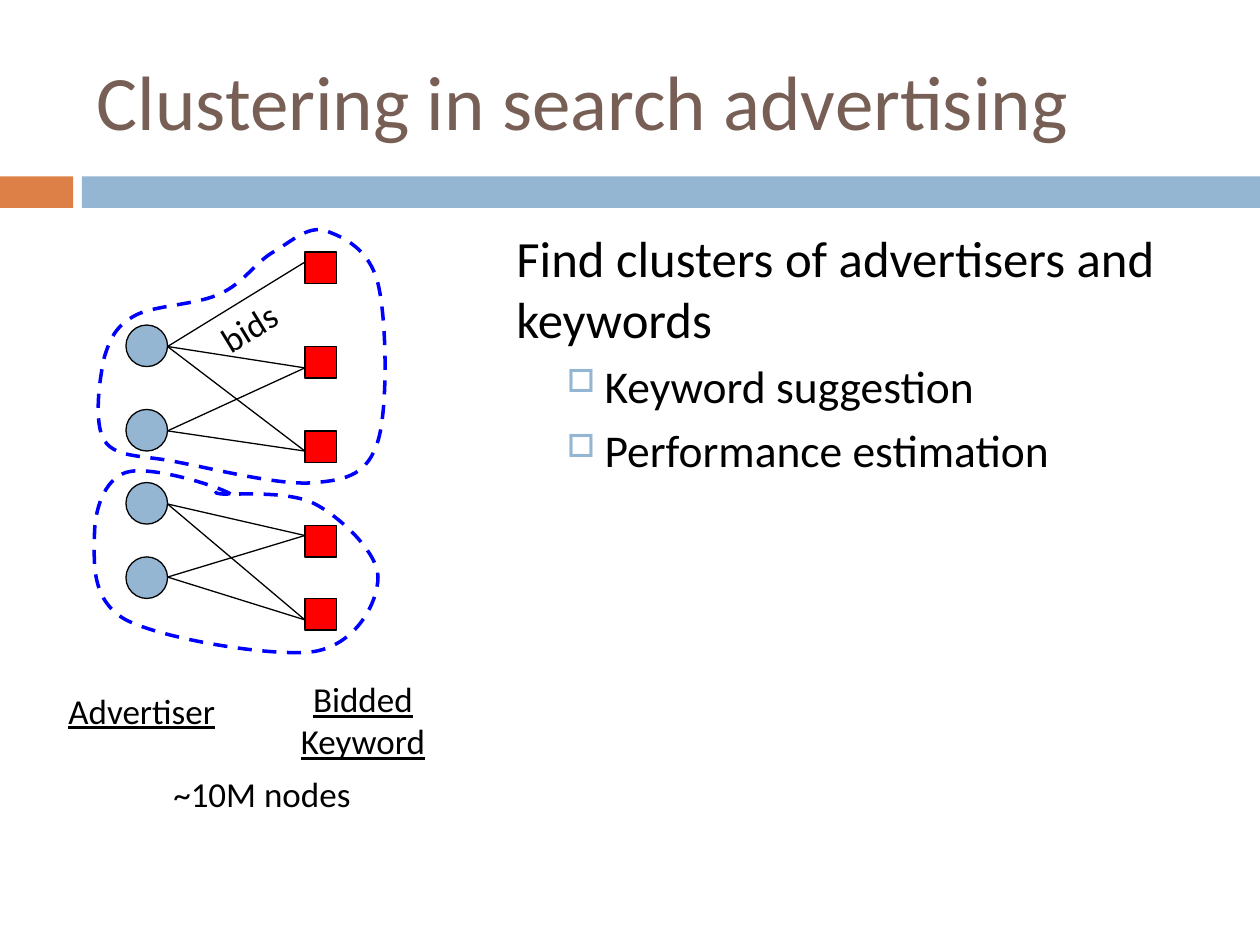
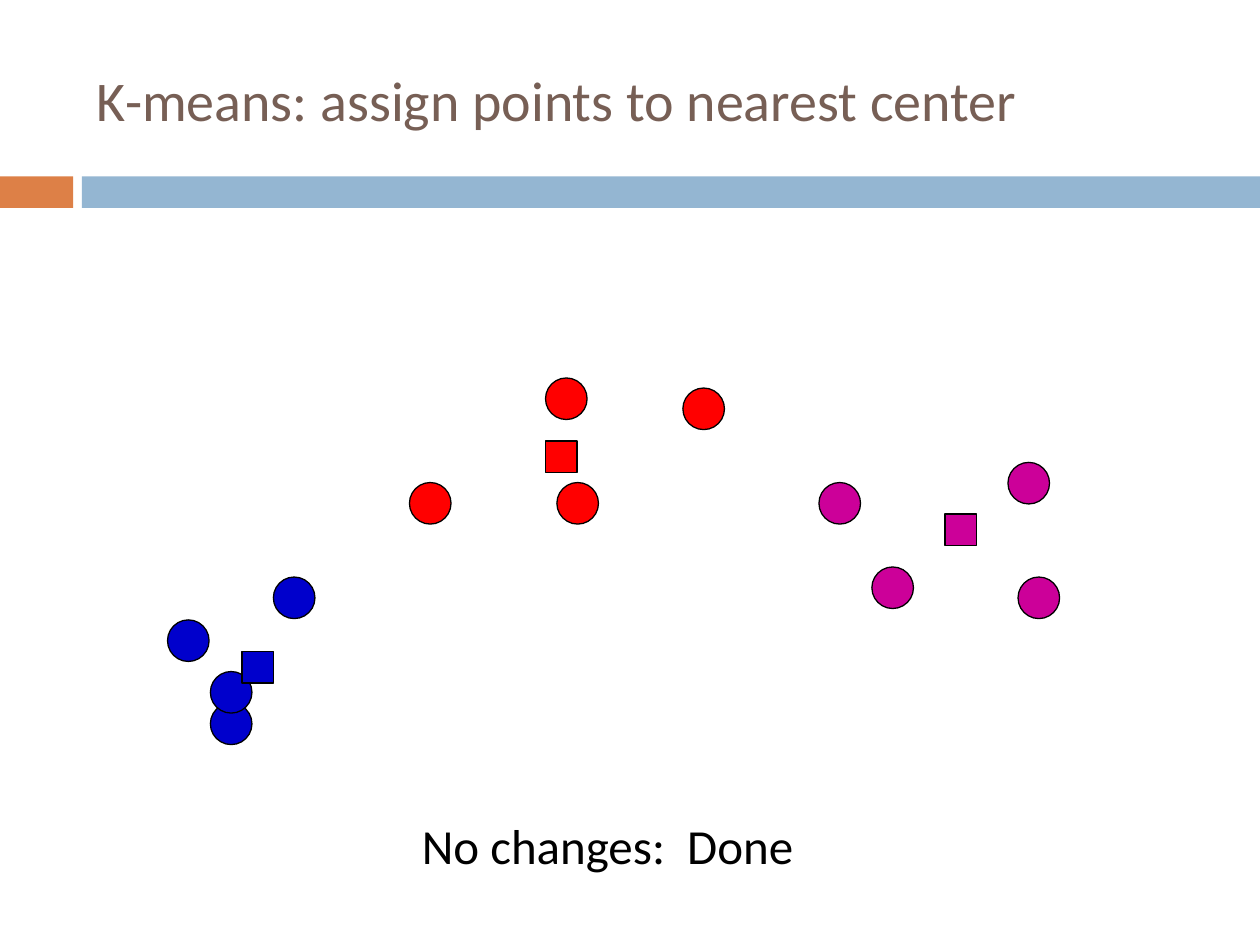
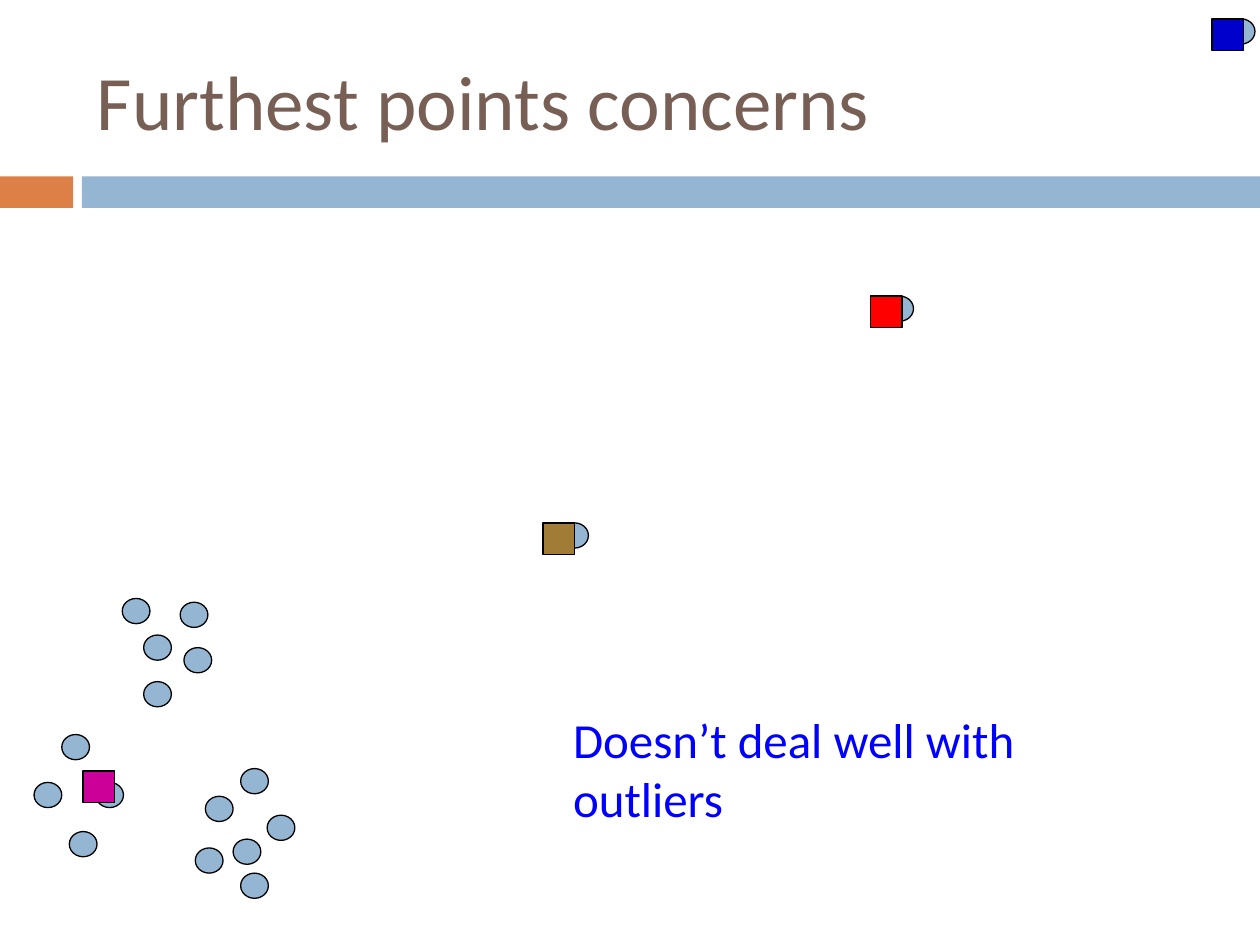
from lxml.etree import SubElement
from pptx import Presentation
from pptx.dml.color import RGBColor
from pptx.enum.dml import MSO_LINE
from pptx.enum.shapes import MSO_CONNECTOR, MSO_SHAPE
from pptx.enum.text import MSO_ANCHOR, PP_ALIGN
from pptx.oxml.ns import qn
from pptx.util import Inches, Pt

FONT = "Calibri"
COLORS = {
    "title": "775F55", "accent": "DD8047", "band": "94B6D2",
    "black": "000000", "red": "FF0000", "blue": "0000CC",
    "outline": "0000FF", "magenta": "CC0099", "brown": "A17C36",
}
POINT = 0.33   # diameter of a data point
CENTER = 0.25  # side of a square marker


def rgb(name):
    return RGBColor.from_string(COLORS[name])


class Deck:
    """Holds the shared style and the slide being drawn."""

    def __init__(self):
        self.prs = Presentation()
        self.prs.slide_width, self.prs.slide_height = Inches(10), Inches(7.5)
        self.s = None

    def slide(self, title, size=44):
        self.s = self.prs.slides.add_slide(self.prs.slide_layouts[6])
        self.shape(0, 1.4, 0.58, 0.25, "accent", outlined=False)
        self.shape(0.65, 1.4, 9.35, 0.25, "band", outlined=False)
        tf = self.text(0.67, 0.25, 8.92, 1.08, title, size, "title")
        tf.vertical_anchor = MSO_ANCHOR.MIDDLE

    def shape(self, x, y, w, h, fill, kind=MSO_SHAPE.RECTANGLE, outlined=True):
        sp = self.s.shapes.add_shape(kind, Inches(x), Inches(y), Inches(w), Inches(h))
        sp.shadow.inherit = False
        sp.fill.solid()
        sp.fill.fore_color.rgb = rgb(fill)
        if outlined:
            sp.line.color.rgb = rgb("black")
            sp.line.width = Pt(0.75)
        else:
            sp.line.fill.background()

    def point(self, x, y, fill="band", w=POINT, h=POINT):
        self.shape(x, y, w, h, fill, MSO_SHAPE.OVAL)

    def center(self, x, y, fill):
        self.shape(x, y, CENTER, CENTER, fill)

    def run(self, p, text, size, color="black", underline=None):
        r = p.add_run()
        r.text = text
        r.font.name, r.font.size = FONT, Pt(size)
        r.font.color.rgb = rgb(color)
        r.font.underline = underline

    def text(self, x, y, w, h, text, size, color="black",
             align=PP_ALIGN.LEFT, underline=None, rotation=0):
        box = self.s.shapes.add_textbox(Inches(x), Inches(y), Inches(w), Inches(h))
        box.rotation = rotation
        tf = box.text_frame
        tf.word_wrap = True
        p = tf.paragraphs[0]
        p.alignment = align
        self.run(p, text, size, color, underline)
        return tf

    def bullet(self, tf, text, size):
        p = tf.add_paragraph()
        p.level = 1
        p.space_before = Pt(5.5)
        pPr = p._p.get_or_add_pPr()
        pPr.set("marL", str(Inches(0.7)))
        pPr.set("indent", str(Inches(-0.3)))
        bu_clr = SubElement(pPr, qn("a:buClr"))
        SubElement(bu_clr, qn("a:srgbClr"), val=COLORS["band"])
        SubElement(pPr, qn("a:buSzPct"), val="70000")
        SubElement(pPr, qn("a:buChar"), char="□")
        self.run(p, text, size)

    def line(self, x1, y1, x2, y2):
        c = self.s.shapes.add_connector(
            MSO_CONNECTOR.STRAIGHT, Inches(x1), Inches(y1), Inches(x2), Inches(y2))
        c.line.color.rgb = rgb("black")
        c.line.width = Pt(0.75)
        SubElement(c._element.spPr, qn("a:effectLst"))

    def dashed_curve(self, start, points):
        """Closed outline; every three points make one Bézier segment."""
        fb = self.s.shapes.build_freeform(*map(Inches, start), scale=1.0)
        fb.add_line_segments([(Inches(x), Inches(y)) for x, y in points], close=True)
        sp = fb.convert_to_shape()
        sp.shadow.inherit = False
        sp.fill.background()
        sp.line.color.rgb = rgb("outline")
        sp.line.width = Pt(2)
        sp.line.dash_style = MSO_LINE.DASH
        # Turn each three straight segments into one curve
        steps = list(sp._element.iter(qn("a:lnTo")))
        for i in range(0, len(points), 3):
            first, *others = steps[i:i + 3]
            first.tag = qn("a:cubicBezTo")
            for step in others:
                first.append(step[0])
                step.getparent().remove(step)


def advertising_slide(deck):
    deck.slide("Clustering in search advertising")
    tf = deck.text(4, 1.75, 5.5, 4.95, "Find clusters of advertisers and keywords", 29)
    tf.paragraphs[0].space_before = Pt(7)
    for item in ("Keyword suggestion", "Performance estimation"):
        deck.bullet(tf, item, 26)

    # Bipartite graph
    for y in (2.58, 3.25, 3.83, 4.42):
        deck.point(1, y)
    for y in (2, 2.75, 3.42, 4.17, 4.75):
        deck.center(2.42, y, "red")
    bids = {2.75: (2.08, 2.92, 3.58), 3.42: (2.92, 3.58),
            4: (4.25, 4.92), 4.58: (4.25, 4.92)}
    for advertiser_y, keyword_ys in bids.items():
        for keyword_y in keyword_ys:
            deck.line(1.33, advertiser_y, 2.42, keyword_y)

    # Cluster outlines
    deck.dashed_curve((2.17, 2), [
        (2.03, 2.08), (1.93, 2.25), (1.75, 2.33),
        (1.57, 2.42), (1.24, 2.42), (1.08, 2.5),
        (0.93, 2.58), (0.88, 2.67), (0.83, 2.83),
        (0.79, 3), (0.74, 3.36), (0.83, 3.5),
        (0.93, 3.64), (1.14, 3.61), (1.42, 3.67),
        (1.69, 3.72), (2.24, 3.86), (2.5, 3.83),
        (2.76, 3.81), (2.92, 3.76), (3, 3.5),
        (3.08, 3.24), (3.07, 2.53), (3, 2.25),
        (2.93, 1.97), (2.72, 1.88), (2.58, 1.83),
        (2.44, 1.79), (2.31, 1.92), (2.17, 2)])
    deck.dashed_curve((1.83, 3.92), [
        (1.71, 3.85), (1.18, 3.69), (1, 3.75),
        (0.82, 3.81), (0.75, 4.06), (0.75, 4.25),
        (0.75, 4.44), (0.71, 4.76), (1, 4.92),
        (1.29, 5.07), (2.17, 5.22), (2.5, 5.17),
        (2.83, 5.11), (3, 4.78), (3, 4.58),
        (3, 4.39), (2.71, 4.11), (2.5, 4),
        (2.29, 3.89), (1.86, 3.93), (1.75, 3.92),
        (1.64, 3.9), (1.81, 3.91), (1.83, 3.92)])

    # Labels
    mid = PP_ALIGN.CENTER
    deck.text(0.25, 5.42, 1.75, 0.44, "Advertiser", 20, align=mid, underline=True)
    deck.text(2.17, 5.33, 1.42, 0.77, "Bidded Keyword", 20, align=mid, underline=True)
    deck.text(1.61, 2.26, 1.11, 0.44, "bids", 20, rotation=328.4)
    deck.text(1.08, 6.08, 2, 0.44, "~10M nodes", 20, align=mid)


def k_means_slide(deck):
    deck.slide("K-means: assign points to nearest center", 32)
    clusters = [  # colour, center, points
        ("blue", (1.92, 5.17), [(1.67, 5.58), (1.33, 4.92), (2.17, 4.58), (1.67, 5.33)]),
        ("red", (4.33, 3.5), [(4.33, 3), (5.42, 3.08), (4.42, 3.83), (3.25, 3.83)]),
        ("magenta", (7.5, 4.08), [(8, 3.67), (8.08, 4.58), (6.5, 3.83), (6.92, 4.5)]),
    ]
    for color, center, points in clusters:
        for x, y in points:
            deck.point(x, y, color)
        deck.center(*center, color)
    deck.text(3.25, 6.42, 5.58, 0.57, "No changes:  Done", 28)


def furthest_points_slide(deck):
    deck.slide("Furthest points concerns")
    left = [(0.49, 5.83), (0.27, 6.21), (0.76, 6.21), (0.55, 6.6)]
    upper = [(1.14, 5.04), (1.14, 5.41), (1.46, 5.14), (1.43, 4.78), (0.97, 4.75)]
    right = [(1.55, 6.73), (1.85, 6.66), (1.63, 6.32), (1.91, 6.1),
             (2.12, 6.47), (1.91, 6.93)]
    outliers = [(9.74, 0.15), (7.03, 2.35), (4.45, 4.15)]
    for x, y in left + upper + right + outliers:
        deck.point(x, y, w=0.22, h=0.2)
    deck.text(4.45, 5.58, 4.82, 0.57, "Doesn’t deal well with outliers", 28, "outline")
    for x, y, color in [(9.62, 0.15, "blue"), (6.91, 2.35, "red"),
                        (0.66, 6.12, "magenta"), (4.31, 4.15, "brown")]:
        deck.center(x, y, color)


def main():
    deck = Deck()
    advertising_slide(deck)
    k_means_slide(deck)
    furthest_points_slide(deck)
    deck.prs.save("out.pptx")


if __name__ == "__main__":
    main()
